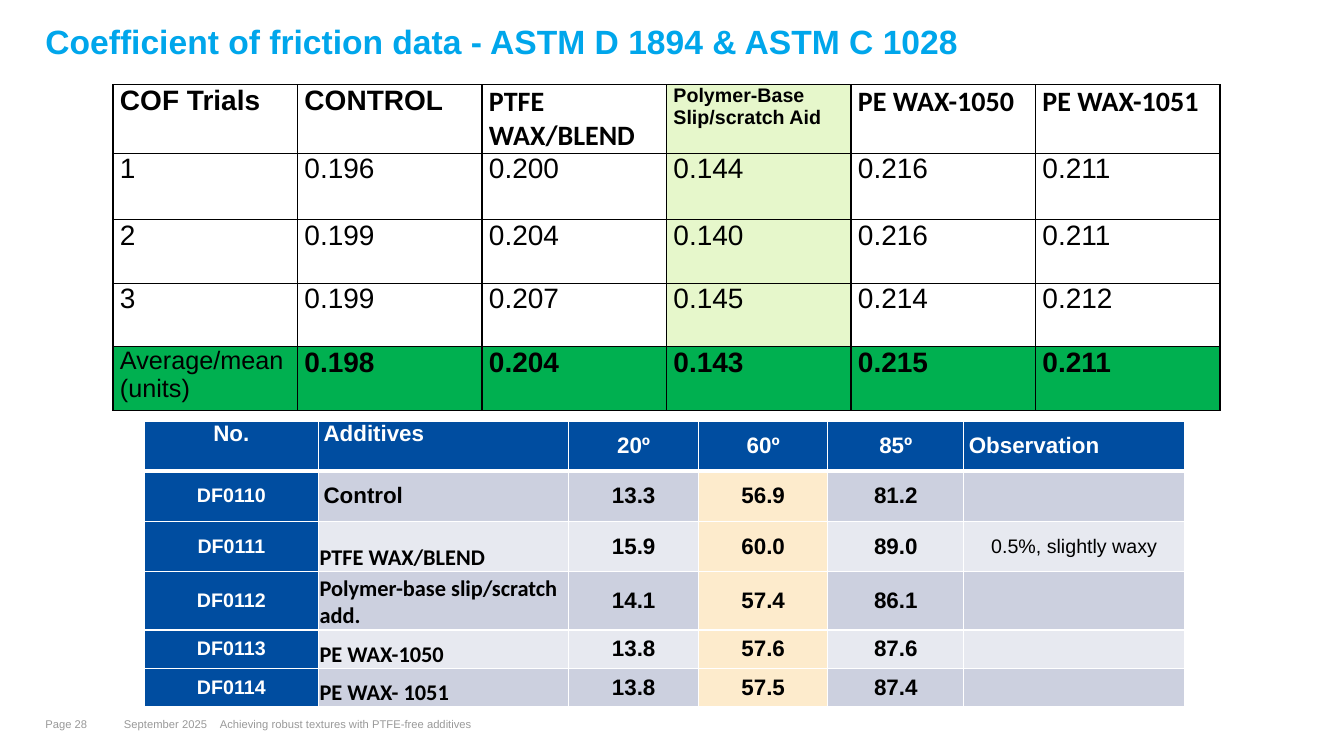
from dataclasses import dataclass

from lxml.etree import SubElement
from pptx import Presentation
from pptx.dml.color import RGBColor
from pptx.enum.text import MSO_ANCHOR, PP_ALIGN
from pptx.oxml.ns import qn
from pptx.util import Inches, Pt


@dataclass(frozen=True)
class Theme:
    """Colours, fonts and type sizes of the slide."""
    title: str = "00A6EB"
    black: str = "000000"
    white: str = "FFFFFF"
    grey: str = "999999"
    lime: str = "E6F7CB"
    green: str = "00B050"
    blue: str = "004DA0"
    cream: str = "FDEBCC"
    bands: tuple = ("CCD0DF", "E7E9F0")
    sans: str = "Arial"
    alt: str = "Calibri"
    title_size: int = 24
    large: int = 20
    medium: int = 18
    normal: int = 16
    small: int = 14
    footer: int = 8


T = Theme()

FRICTION = [
    ["COF Trials", "CONTROL", "PTFE WAX/BLEND", "Polymer-Base Slip/scratch Aid",
     "PE WAX-1050", "PE WAX-1051"],
    ["1", "0.196", "0.200", "0.144", "0.216", "0.211"],
    ["2", "0.199", "0.204", "0.140", "0.216", "0.211"],
    ["3", "0.199", "0.207", "0.145", "0.214", "0.212"],
    ["Average/mean (units)", "0.198", "0.204", "0.143", "0.215", "0.211"],
]
GLOSS = [
    ["No.", "Additives", "20º", "60º", "85º", "Observation"],
    ["DF0110", "Control", "13.3", "56.9", "81.2", ""],
    ["DF0111", "PTFE WAX/BLEND", "15.9", "60.0", "89.0", "0.5%, slightly waxy"],
    ["DF0112", "Polymer-base slip/scratch add.", "14.1", "57.4", "86.1", ""],
    ["DF0113", "PE WAX-1050", "13.8", "57.6", "87.6", ""],
    ["DF0114", "PE WAX- 1051", "13.8", "57.5", "87.4", ""],
]
FOOTER = [
    (0.45, 0.68, "Page 28"),
    (1.23, 0.87, "September 2025"),
    (2.18, 8.98, "Achieving robust textures with PTFE-free additives"),
]


def add_run(p, text, size, color, bold=False, font=T.sans):
    """Add one formatted run to a paragraph."""
    r = p.add_run()
    r.text = text
    r.font.size, r.font.bold, r.font.name = Pt(size), bold, font
    r.font.color.rgb = RGBColor.from_string(color)


def set_margins(box, left=0, top=0, right=0, bottom=0):
    """Set the inner margins of a text frame or cell in inches."""
    box.margin_left, box.margin_top = Inches(left), Inches(top)
    box.margin_right, box.margin_bottom = Inches(right), Inches(bottom)


def set_borders(cell, color, bottom=1):
    """Draw the four borders of a cell."""
    tc_pr = cell._tc.get_or_add_tcPr()
    for side, width in (("L", 1), ("R", 1), ("T", 1), ("B", bottom)):
        ln = SubElement(tc_pr, qn(f"a:ln{side}"), w=str(Pt(width)))
        SubElement(SubElement(ln, qn("a:solidFill")), qn("a:srgbClr"), val=color)


def set_fill(cell, color):
    """Fill a cell, or leave it clear when there is no colour."""
    if color:
        cell.fill.solid()
        cell.fill.fore_color.rgb = RGBColor.from_string(color)
    else:
        cell.fill.background()


def add_table(s, left, top, widths, heights, data, style_cell):
    """Add a table and style every cell by its row and column."""
    tbl = s.shapes.add_table(len(data), len(widths), Inches(left), Inches(top),
                             Inches(sum(widths)), Inches(sum(heights))).table
    tbl.first_row = tbl.horz_banding = False
    for col, width in zip(tbl.columns, widths):
        col.width = Inches(width)
    for i, (row, height) in enumerate(zip(tbl.rows, heights)):
        row.height = Inches(height)
        for j, cell in enumerate(row.cells):
            style_cell(cell, data[i][j], i, j)


def style_friction(cell, text, i, j):
    """Style one cell of the friction table."""
    header, mean = i == 0, i == len(FRICTION) - 1
    set_borders(cell, T.black)
    set_fill(cell, T.green if mean else T.lime if j == 3 else None)
    set_margins(cell, left=0.07, right=0.07)
    size = T.small if header and j == 3 else T.medium if mean and j == 0 else T.large
    p = cell.text_frame.paragraphs[0]
    p.space_after = Pt(2)
    add_run(p, text, size, T.black, header or (mean and j > 0),
            T.alt if header and j in (2, 4, 5) else T.sans)


def style_gloss(cell, text, i, j):
    """Style one cell of the gloss table."""
    header, product = i == 0, i > 1 and j == 1
    on_blue, note = header or j == 0, i > 0 and j == 5
    set_borders(cell, T.white, 3 if header else 1)
    set_fill(cell, T.blue if on_blue else T.cream if j == 3 else T.bands[(i - 1) % 2])
    if product:
        set_margins(cell, 0.01, 0.01, 0.01)
        cell.vertical_anchor = MSO_ANCHOR.BOTTOM
    else:
        set_margins(cell, left=0.05, right=0.05)
        cell.vertical_anchor = MSO_ANCHOR.TOP if header and j < 2 else MSO_ANCHOR.MIDDLE
    if not text:
        return
    p = cell.text_frame.paragraphs[0]
    left = j == 1 or (header and j == 5)
    p.alignment = PP_ALIGN.LEFT if left else PP_ALIGN.CENTER
    p.space_after = Pt(0 if product else 1)
    add_run(p, text, T.small if note or (i > 0 and j == 0) else T.normal,
            T.white if on_blue else T.black, not note, T.alt if product else T.sans)


def set_title(s, text):
    """Place and format the title placeholder."""
    sp = s.shapes.title
    sp.left, sp.top = Inches(0.45), Inches(0.21)
    sp.width, sp.height = Inches(12.44), Inches(0.67)
    tf = sp.text_frame
    set_margins(tf, top=0.04)
    tf.vertical_anchor = MSO_ANCHOR.TOP
    p = tf.paragraphs[0]
    p.alignment, p.line_spacing, p.space_before = PP_ALIGN.LEFT, 0.9, Pt(0)
    add_run(p, text, T.title_size, T.title, True)


def add_footer(s, left, width, text):
    """Add one footer text box."""
    tf = s.shapes.add_textbox(Inches(left), Inches(7.12),
                              Inches(width), Inches(0.16)).text_frame
    tf.word_wrap = True
    set_margins(tf)
    add_run(tf.paragraphs[0], text, T.footer, T.grey)


def main():
    """Build the slide and save it."""
    prs = Presentation()
    prs.slide_width, prs.slide_height = Inches(13.33), Inches(7.5)
    s = prs.slides.add_slide(prs.slide_layouts[5])
    set_title(s, "Coefficient of friction data - ASTM D 1894 & ASTM C 1028")
    add_table(s, 1.12, 0.84, [1.83] * 6, [0.68, 0.66] + [0.63] * 3,
              FRICTION, style_friction)
    for left, width, text in FOOTER:
        add_footer(s, left, width, text)
    add_table(s, 1.43, 4.18, [1.73, 2.48, 1.29, 1.28, 1.35, 2.19],
              [0.49, 0.5, 0.5, 0.58, 0.38, 0.38], GLOSS, style_gloss)
    prs.save("out.pptx")


if __name__ == "__main__":
    main()
